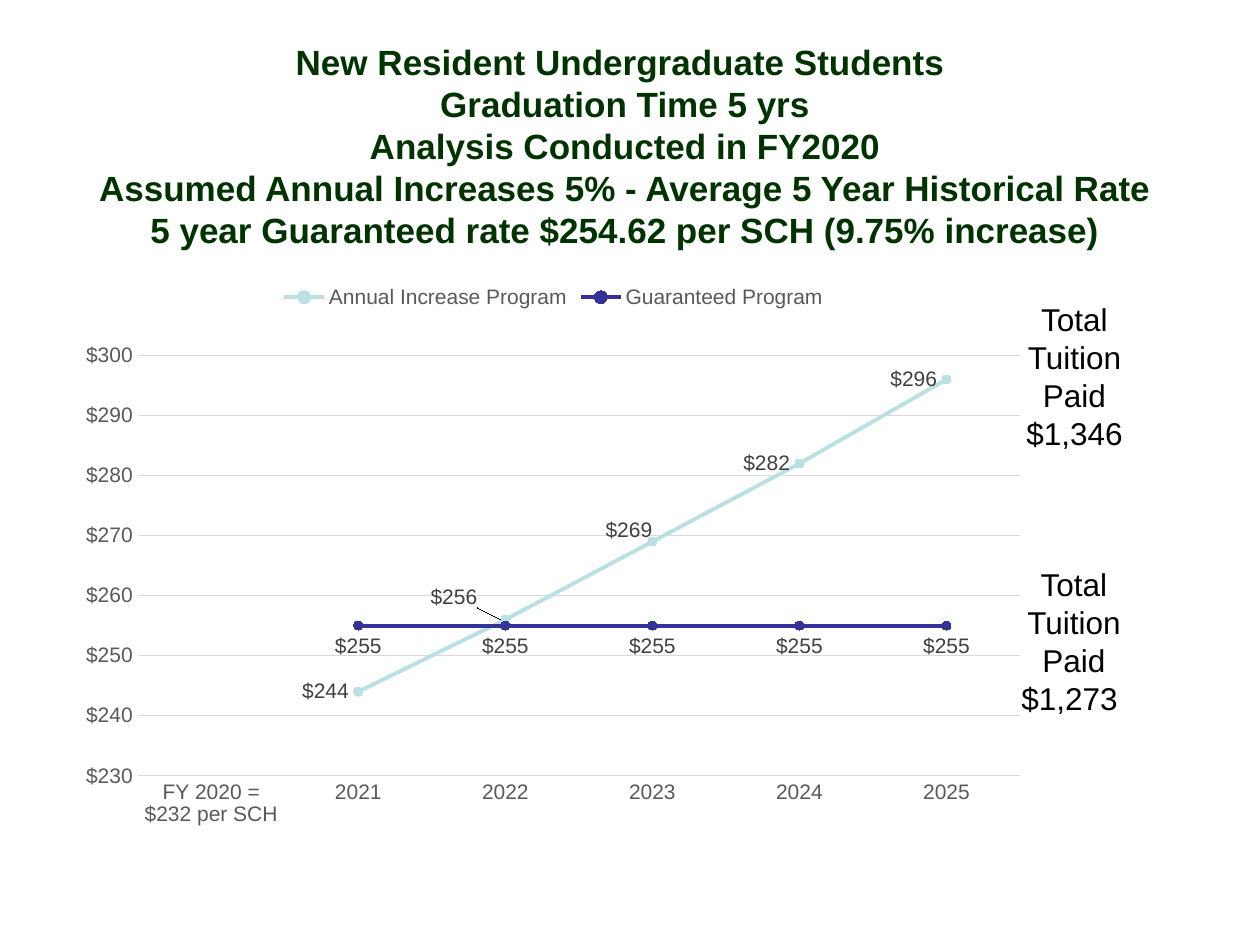
from lxml.etree import SubElement
from pptx import Presentation
from pptx.chart.data import CategoryChartData
from pptx.dml.color import RGBColor
from pptx.enum.chart import (XL_CHART_TYPE, XL_LEGEND_POSITION, XL_MARKER_STYLE,
                             XL_TICK_MARK, XL_LABEL_POSITION as Position)
from pptx.enum.text import MSO_ANCHOR as Anchor, PP_ALIGN
from pptx.oxml import parse_xml
from pptx.oxml.ns import qn
from pptx.util import Emu, Pt

PX = 914400 / 126
FONT = "Arial"
MONEY = '"$"#,##0'
COLORS = {
    "title": "003300", "text": "000000", "axis": "595959", "label": "404040",
    "grid": "D9D9D9", "annual": "BBE0E3", "guaranteed": "333399",
}
CHART_NS = "http://schemas.openxmlformats.org/drawingml/2006/chart"

YEARS = ["FY 2020 = $232 per SCH", "2021", "2022", "2023", "2024", "2025"]
ANNUAL = [None, 244, 256, 269, 282, 296]
GUARANTEED = [None] + [255] * 5
TITLE = "\v".join([
    "New Resident Undergraduate Students ",
    "Graduation Time 5 yrs",
    "Analysis Conducted in FY2020",
    "Assumed Annual Increases 5% - Average 5 Year Historical Rate",
    "5 year Guaranteed rate $254.62 per SCH (9.75% increase)",
])


def px(*lengths):
    return [Emu(round(length * PX)) for length in lengths]


def rgb(name):
    return RGBColor.from_string(COLORS[name])


def set_font(font, size, color, bold=False):
    font.name = FONT
    font.size = Pt(size)
    font.bold = bold
    font.color.rgb = rgb(color)


def set_line(line, color, width):
    line.color.rgb = rgb(color)
    line.width = Pt(width)


def add_text(slide, text, box, size=18, color="text", bold=False, anchor=Anchor.TOP):
    """Add centred text; a newline starts a paragraph, a \\v breaks a line."""
    frame = slide.shapes.add_textbox(*px(*box)).text_frame
    frame.word_wrap = True
    frame.vertical_anchor = anchor
    frame.text = text
    for paragraph in frame.paragraphs:
        paragraph.alignment = PP_ALIGN.CENTER
        paragraph.line_spacing = Pt(size * 1.2)
        set_font(paragraph.font, size, color, bold)
        for run in paragraph.runs:
            set_font(run.font, size, color, bold)


def manual_layout(**values):
    """Make a c:layout element from its settings, given in schema order."""
    layout = parse_xml(f'<c:layout xmlns:c="{CHART_NS}"><c:manualLayout/></c:layout>')
    for name, value in values.items():
        SubElement(layout[0], qn(f"c:{name}")).set("val", str(value))
    return layout


def place_plot(chart):
    plot_area = chart._chartSpace.chart.plotArea
    for layout in plot_area.findall(qn("c:layout")):
        plot_area.remove(layout)
    plot_area.insert(0, manual_layout(
        layoutTarget="inner", xMode="edge", yMode="edge",
        x=0.055, y=0.146, w=0.944, h=0.735))


def style_axes(chart):
    for axis in (chart.category_axis, chart.value_axis):
        axis.major_tick_mark = axis.minor_tick_mark = XL_TICK_MARK.NONE
        set_font(axis.tick_labels.font, 12, "axis")
    set_line(chart.category_axis.format.line, "grid", 0.75)
    axis = chart.value_axis
    axis.minimum_scale, axis.maximum_scale, axis.major_unit = 230, 300, 10
    axis.format.line.fill.background()
    axis.has_major_gridlines = True
    set_line(axis.major_gridlines.format.line, "grid", 0.75)
    axis.tick_labels.number_format = MONEY
    axis.tick_labels.number_format_is_linked = False


def style_series(series, color, position):
    series.smooth = False
    set_line(series.format.line, color, 2.25)
    marker = series.marker
    marker.style = XL_MARKER_STYLE.CIRCLE
    marker.size = 5
    marker.format.fill.solid()
    marker.format.fill.fore_color.rgb = rgb(color)
    set_line(marker.format.line, color, 0.75)
    labels = series.data_labels
    labels.show_value = True
    labels.position = position
    labels.number_format = MONEY
    labels.number_format_is_linked = False
    set_font(labels.font, 12, "label")


def move_label(series, index, x, y):
    """Shift one label by fractions of the chart's size."""
    label = series.points[index].data_label
    label.position = Position.LEFT
    set_font(label.font, 12, "label")
    for element in series._element.iter(qn("c:dLbl")):
        if element.find(qn("c:idx")).get("val") == str(index):
            element.insert(1, manual_layout(x=x, y=y))


def add_tuition_chart(slide, box):
    data = CategoryChartData(number_format=MONEY)
    data.categories = YEARS
    data.add_series("Annual Increase Program", ANNUAL)
    data.add_series("Guaranteed Program", GUARANTEED)
    chart = slide.shapes.add_chart(XL_CHART_TYPE.LINE_MARKERS, *px(*box), data).chart
    set_font(chart.font, 10, "text")
    chart.has_title = False
    chart.has_legend = True
    chart.legend.position = XL_LEGEND_POSITION.TOP
    chart.legend.include_in_layout = False
    set_font(chart.legend.font, 12, "axis")
    plot = chart.plots[0]
    plot.vary_by_categories = False
    place_plot(chart)
    style_axes(chart)
    annual, guaranteed = plot.series
    style_series(annual, "annual", Position.LEFT)
    style_series(guaranteed, "guaranteed", Position.BELOW)
    move_label(annual, 2, -0.02, -0.04)
    move_label(annual, 3, 0.01, -0.02)


def main():
    presentation = Presentation()
    presentation.slide_width, presentation.slide_height = px(1260, 945)
    slide = presentation.slides.add_slide(presentation.slide_layouts[6])
    add_tuition_chart(slide, (86, 272, 935, 572))
    add_text(slide, "Total Tuition\nPaid\n$1,273 ", (987, 559, 174, 165))
    add_text(slide, "Total Tuition\nPaid\n$1,346", (1002, 294, 145, 165))
    add_text(slide, TITLE, (42, 53, 1166, 185), size=20, color="title", bold=True,
             anchor=Anchor.MIDDLE)
    presentation.save("out.pptx")


if __name__ == "__main__":
    main()
